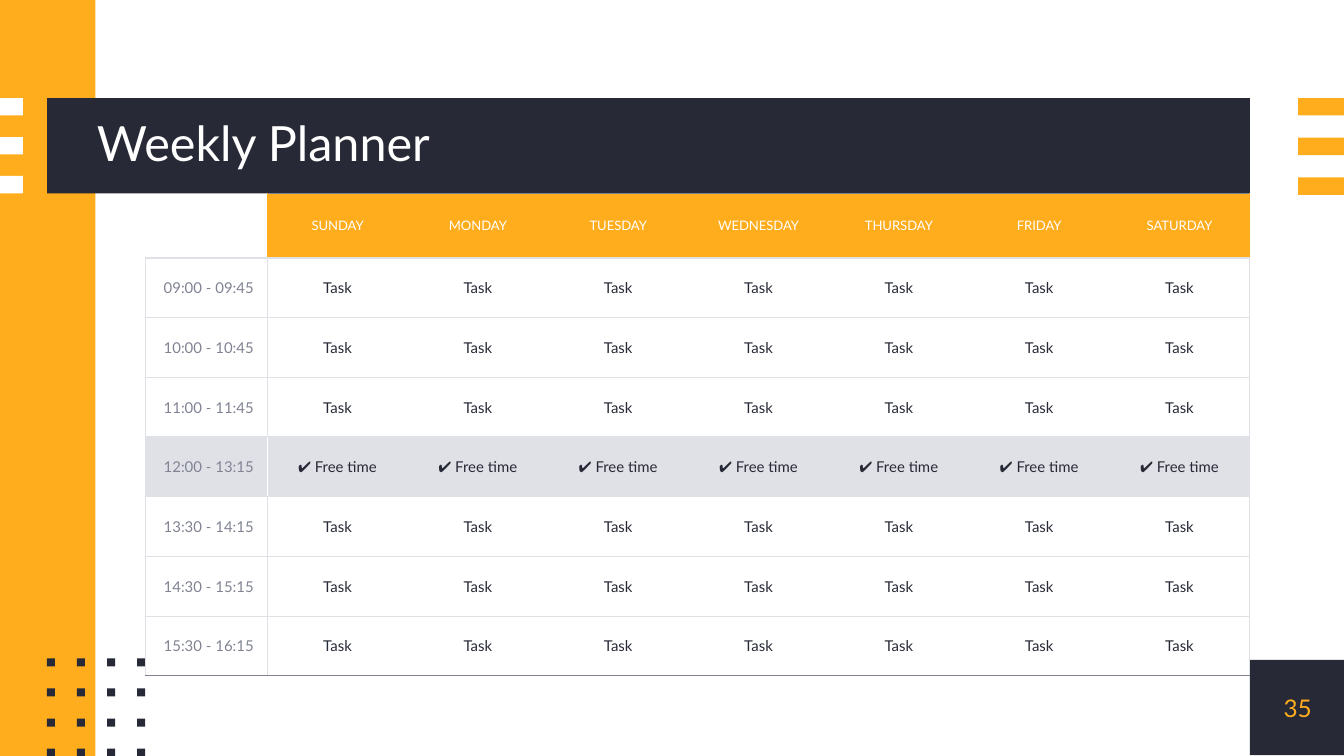
from itertools import product

from lxml.etree import SubElement
from pptx import Presentation
from pptx.dml.color import RGBColor
from pptx.enum.shapes import MSO_SHAPE as Shape
from pptx.enum.text import MSO_ANCHOR as Anchor, PP_ALIGN as Align
from pptx.oxml.ns import qn
from pptx.util import Inches, Pt

COLORS = {
    "navy": "272A36",
    "orange": "FFAD1D",
    "white": "FFFFFF",
    "gray": "808392",
    "pale": "E0E0E7",
}
FONT = "Lato"
NO_STYLE = "{2D5ABB26-0587-4C30-8999-92F81FD0307C}"

DAYS = ["SUNDAY", "MONDAY", "TUESDAY", "WEDNESDAY", "THURSDAY", "FRIDAY", "SATURDAY"]
TIMES = [
    "09:00 - 09:45",
    "10:00 - 10:45",
    "11:00 - 11:45",
    "12:00 - 13:15",
    "13:30 - 14:15",
    "14:30 - 15:15",
    "15:30 - 16:15",
]
FREE_ROW = 4

prs = Presentation()
prs.slide_width, prs.slide_height = Inches(10), Inches(10 * 9 / 16)
slide = prs.slides.add_slide(prs.slide_layouts[6])


def add_block(left, top, width, height, color):
    """Add a borderless filled rectangle, measured in inches."""
    block = slide.shapes.add_shape(
        Shape.RECTANGLE, Inches(left), Inches(top), Inches(width), Inches(height)
    )
    block.shadow.inherit = False
    block.fill.solid()
    block.fill.fore_color.rgb = RGBColor.from_string(COLORS[color])
    block.line.fill.background()


def write(holder, text, size, color, align=Align.LEFT, spacing=None, margin=0):
    """Put one formatted line into a text frame or a table cell."""
    holder.vertical_anchor = Anchor.MIDDLE
    holder.margin_left = holder.margin_right = Inches(margin)
    holder.margin_top = holder.margin_bottom = Inches(margin)
    paragraph = getattr(holder, "text_frame", holder).paragraphs[0]
    paragraph.alignment = align
    if spacing:
        paragraph.line_spacing = spacing
    run = paragraph.add_run()
    run.text = text
    run.font.name = FONT
    run.font.size = Pt(size)
    run.font.color.rgb = RGBColor.from_string(COLORS[color])


# Background decoration
add_block(9.3, 4.91, 0.71, 0.71, "navy")
add_block(0, 0, 0.71, 5.63, "orange")
add_block(0.35, 0.73, 8.95, 0.71, "navy")
for i in range(3):
    add_block(0, 0.73 + 0.29 * i, 0.17, 0.13, "white")
    add_block(9.66, 0.73 + 0.295 * i, 0.34, 0.13, "orange")
for row, col in product(range(4), repeat=2):
    add_block(0.35 + 0.67 / 3 * col, 4.9 + 0.67 / 3 * row, 0.06, 0.06, "navy")

# Title and page number
title = slide.shapes.add_textbox(Inches(0.72), Inches(0.73), Inches(8.58), Inches(0.71))
title.text_frame.word_wrap = True
write(title.text_frame, "Weekly Planner", size=26, color="white", spacing=0.9)
page_number = slide.shapes.add_textbox(
    Inches(9.3), Inches(4.91), Inches(0.71), Inches(0.71)
)
page_number.text_frame.word_wrap = True
write(page_number.text_frame, "35", size=13, color="orange", align=Align.CENTER)

# Planner table
last_row, last_col = len(TIMES), len(DAYS)
planner = slide.shapes.add_table(
    last_row + 1, last_col + 1, Inches(1.08), Inches(1.44), Inches(8.22), Inches(3.59)
).table
planner.first_row = planner.horz_banding = False
planner._tbl.tblPr.find(qn("a:tableStyleId")).text = NO_STYLE
for col, column in enumerate(planner.columns):
    column.width = Inches(7.31 / last_col if col else 0.91)
for row, table_row in enumerate(planner.rows):
    table_row.height = Inches(3.11 / last_row if row else 0.48)

for row, col in product(range(last_row + 1), range(last_col + 1)):
    cell = planner.cell(row, col)

    # Words
    if row and col:
        label = "✔ Free time" if row == FREE_ROW else "Task"
        write(cell, label, size=8, color="navy", align=Align.CENTER, margin=0.1)
    elif row:
        write(cell, TIMES[row - 1], size=8, color="gray", align=Align.RIGHT, margin=0.1)
    elif col:
        write(cell, DAYS[col - 1], size=7, color="white", align=Align.CENTER, margin=0.1)
    else:
        cell.margin_top = cell.margin_bottom = 0

    # Borders: the time column is ruled off, the days share horizontal rules only
    edge = "pale" if row else "orange"
    divider = "white" if row == FREE_ROW else edge
    left_borders = {0: "pale" if row else None, 1: divider}
    right_borders = {0: divider, last_col: edge}
    borders = {
        "a:lnL": left_borders.get(col),
        "a:lnR": right_borders.get(col),
        "a:lnT": "pale" if row else "gray" if col else None,
        "a:lnB": "gray" if row == last_row else "pale",
    }
    properties = cell._tc.get_or_add_tcPr()
    for side, border in borders.items():
        line = SubElement(properties, qn(side), w=str(Pt(0.75)))
        if border:
            solid = SubElement(line, qn("a:solidFill"))
            SubElement(solid, qn("a:srgbClr"), val=COLORS[border])
        else:
            SubElement(line, qn("a:noFill"))

    # Fill
    fill = "pale" if row == FREE_ROW else "orange" if col and not row else None
    if fill:
        cell.fill.solid()
        cell.fill.fore_color.rgb = RGBColor.from_string(COLORS[fill])
    else:
        cell.fill.background()

prs.save("out.pptx")
